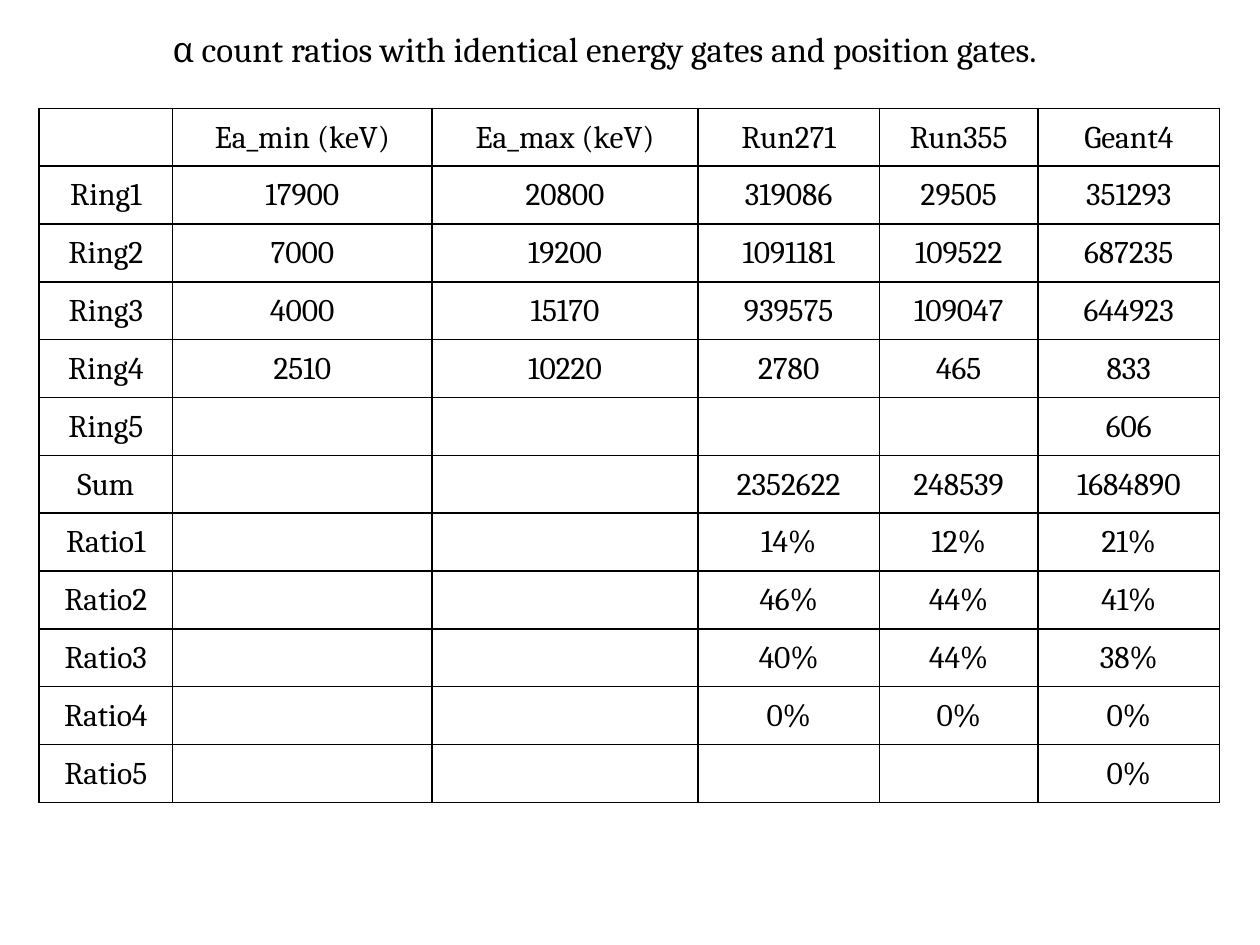
from lxml import etree
from pptx import Presentation
from pptx import util as u
from pptx.dml.color import RGBColor
from pptx.enum import text
from pptx.oxml import ns


def add_run(paragraph, words, size, color="000000"):
    run = paragraph.add_run()
    run.text = words
    run.font.name = "Cambria"
    run.font.size = u.Pt(size)
    run.font.color.rgb = RGBColor.from_string(color)


def add_borders(cell, color="000000"):
    properties = cell._tc.get_or_add_tcPr()
    for side in ("a:lnL", "a:lnR", "a:lnT", "a:lnB"):
        line = etree.SubElement(properties, ns.qn(side), w=str(u.Pt(1)))
        fill = etree.SubElement(line, ns.qn("a:solidFill"))
        etree.SubElement(fill, ns.qn("a:srgbClr"), val=color)


presentation = Presentation()
presentation.slide_width = u.Inches(10)
presentation.slide_height = u.Inches(7.5)
slide = presentation.slides.add_slide(presentation.slide_layouts[5])

title = slide.shapes.title
title.left, title.top = u.Inches(1.27), u.Inches(0.17)
title.width, title.height = u.Inches(7.42), u.Inches(0.44)
frame = title.text_frame
frame.word_wrap = False
frame.auto_size = text.MSO_AUTO_SIZE.SHAPE_TO_FIT_TEXT
frame.vertical_anchor = text.MSO_ANCHOR.TOP
paragraph = frame.paragraphs[0]
paragraph.alignment = text.PP_ALIGN.LEFT
add_run(paragraph, "α count ratios with identical energy gates and position gates.", 20)

rows = [
    ["", "Ea_min (keV)", "Ea_max (keV)", "Run271", "Run355", "Geant4"],
    ["Ring1", "17900", "20800", "319086", "29505", "351293"],
    ["Ring2", "7000", "19200", "1091181", "109522", "687235"],
    ["Ring3", "4000", "15170", "939575", "109047", "644923"],
    ["Ring4", "2510", "10220", "2780", "465", "833"],
    ["Ring5", "", "", "", "", "606"],
    ["Sum", "", "", "2352622", "248539", "1684890"],
    ["Ratio1", "", "", "14%", "12%", "21%"],
    ["Ratio2", "", "", "46%", "44%", "41%"],
    ["Ratio3", "", "", "40%", "44%", "38%"],
    ["Ratio4", "", "", "0%", "0%", "0%"],
    ["Ratio5", "", "", "", "", "0%"],
]
column_widths = [1.06, 2.06, 2.11, 1.44, 1.26, 1.44]

table = slide.shapes.add_table(
    len(rows), len(column_widths),
    u.Inches(0.31), u.Inches(0.86), u.Inches(9.38), u.Inches(5.51),
).table
table.first_row = False
table.horz_banding = False
for column, width in zip(table.columns, column_widths):
    column.width = u.Inches(width)

for row_index, row in enumerate(rows):
    for column_index, words in enumerate(row):
        cell = table.cell(row_index, column_index)
        cell.margin_left = cell.margin_right = cell.margin_top = u.Inches(0.01)
        cell.margin_bottom = 0
        cell.vertical_anchor = text.MSO_ANCHOR.MIDDLE
        add_borders(cell)
        cell.fill.background()
        if words:
            paragraph = cell.text_frame.paragraphs[0]
            paragraph.alignment = text.PP_ALIGN.CENTER
            add_run(paragraph, words, 18)

presentation.save("out.pptx")
